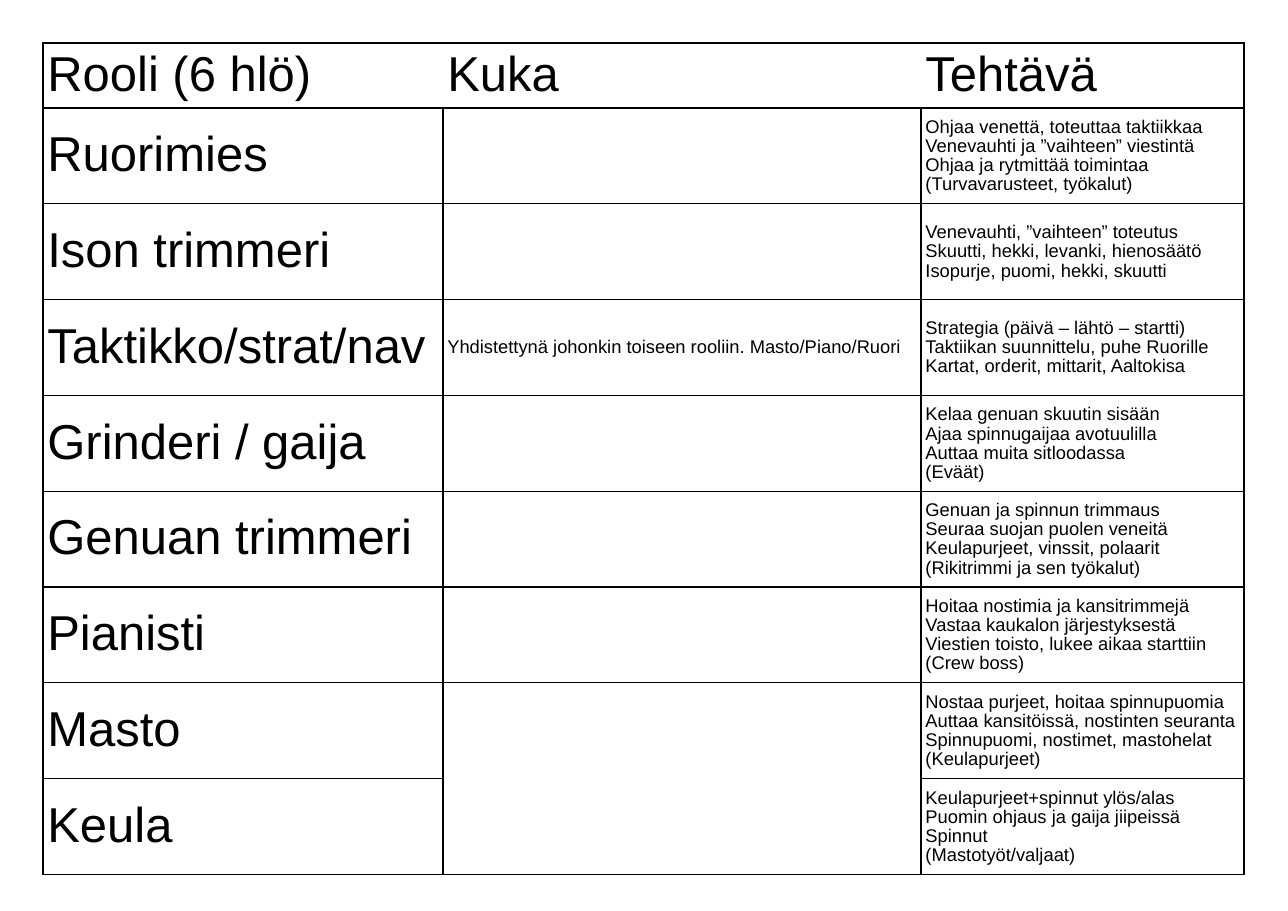
from dataclasses import dataclass

from lxml import etree
from pptx import Presentation
from pptx.dml.color import RGBColor
from pptx.enum.text import MSO_ANCHOR, PP_ALIGN
from pptx.oxml.ns import qn
from pptx.table import _Cell
from pptx.util import Emu, Pt

MIDDLE = MSO_ANCHOR.MIDDLE
LEFT = PP_ALIGN.LEFT
BLACK = RGBColor(0x00, 0x00, 0x00)
FONT = "Arial"
ROLE_SIZE, TASK_SIZE = 32, 12
LINE_SPACING = 0.93
THIN, THICK = 1, 1.42

EMU_PER_PX = 9144
PAGE_WIDTH, PAGE_HEIGHT = 1169, 827
TABLE_LEFT, TABLE_TOP = 39, 39
COLUMN_WIDTHS = (363, 434, 293)
HEADER_HEIGHT, ROLE_HEIGHT = 59, 87
SIDE_MARGIN, TOP_MARGIN, BOTTOM_MARGIN = 4, 5, 4

HEADINGS = ("Rooli (6 hlö)", "Kuka", "Tehtävä")
WHO_COLUMN = 1


@dataclass(frozen=True)
class Role:
    name: str
    tasks: tuple[str, ...]
    who: str = ""


ROLES = (
    Role("Ruorimies", (
        "Ohjaa venettä, toteuttaa taktiikkaa",
        "Venevauhti ja ”vaihteen” viestintä",
        "Ohjaa ja rytmittää toimintaa",
        "(Turvavarusteet, työkalut)")),
    Role("Ison trimmeri", (
        "Venevauhti, ”vaihteen” toteutus",
        "Skuutti, hekki, levanki, hienosäätö",
        "Isopurje, puomi, hekki, skuutti")),
    Role("Taktikko/strat/nav", (
        "Strategia (päivä – lähtö – startti)",
        "Taktiikan suunnittelu, puhe Ruorille",
        "Kartat, orderit, mittarit, Aaltokisa"),
        "Yhdistettynä johonkin toiseen rooliin. Masto/Piano/Ruori"),
    Role("Grinderi / gaija", (
        "Kelaa genuan skuutin sisään",
        "Ajaa spinnugaijaa avotuulilla",
        "Auttaa muita sitloodassa",
        "(Eväät)")),
    Role("Genuan trimmeri", (
        "Genuan ja spinnun trimmaus",
        "Seuraa suojan puolen veneitä",
        "Keulapurjeet, vinssit, polaarit",
        "(Rikitrimmi ja sen työkalut)")),
    Role("Pianisti", (
        "Hoitaa nostimia ja kansitrimmejä",
        "Vastaa kaukalon järjestyksestä",
        "Viestien toisto, lukee aikaa starttiin",
        "(Crew boss)")),
    Role("Masto", (
        "Nostaa purjeet, hoitaa spinnupuomia",
        "Auttaa kansitöissä, nostinten seuranta",
        "Spinnupuomi, nostimet, mastohelat",
        "(Keulapurjeet)")),
    Role("Keula", (
        "Keulapurjeet+spinnut ylös/alas",
        "Puomin ohjaus ja gaija jiipeissä",
        "Spinnut",
        "(Mastotyöt/valjaat)")),
)
LAST_ROW = len(ROLES)
LAST_COLUMN = len(HEADINGS) - 1


def px(length: int) -> Emu:
    return Emu(length * EMU_PER_PX)


def border_widths(row: int, column: int) -> dict[str, float]:
    """Line widths in points by side; zero hides the side."""
    widths = {"a:lnL": THIN, "a:lnR": THIN, "a:lnT": THIN, "a:lnB": THIN}
    if row == 0:
        widths["a:lnL"] = THICK if column == 0 else 0
        widths["a:lnR"] = THICK if column == LAST_COLUMN else 0
        widths["a:lnT"] = THICK
    if column == WHO_COLUMN and row == LAST_ROW - 1:
        widths["a:lnB"] = 0
    if column == WHO_COLUMN and row == LAST_ROW:
        widths["a:lnT"] = 0
    return widths


def draw_borders(cell: _Cell, widths: dict[str, float]) -> None:
    properties = cell._tc.get_or_add_tcPr()
    for side, width in widths.items():
        line = etree.SubElement(properties, qn(side), w=str(int(Pt(width))))
        if width:
            fill = etree.SubElement(line, qn("a:solidFill"))
            etree.SubElement(fill, qn("a:srgbClr"), val=str(BLACK))
        else:
            etree.SubElement(line, qn("a:noFill"))


def write_lines(cell: _Cell, lines: tuple[str, ...], size: int) -> None:
    frame = cell.text_frame
    for index, line in enumerate(lines):
        para = frame.add_paragraph() if index else frame.paragraphs[0]
        para.alignment = LEFT
        para.line_spacing = LINE_SPACING
        span = para.add_run()
        span.text = line
        span.font.name = FONT
        span.font.size = Pt(size)
        span.font.color.rgb = BLACK


def format_cell(cell: _Cell, row: int, column: int) -> None:
    cell.vertical_anchor = MIDDLE
    cell.margin_left = cell.margin_right = px(SIDE_MARGIN)
    cell.margin_top = px(TOP_MARGIN)
    cell.margin_bottom = px(BOTTOM_MARGIN)
    draw_borders(cell, border_widths(row, column))
    cell.fill.background()


def main() -> None:
    deck = Presentation()
    deck.slide_width, deck.slide_height = px(PAGE_WIDTH), px(PAGE_HEIGHT)
    page = deck.slides.add_slide(deck.slide_layouts[6])
    row_heights = [HEADER_HEIGHT] + [ROLE_HEIGHT] * len(ROLES)
    table = page.shapes.add_table(
        len(row_heights), len(COLUMN_WIDTHS), px(TABLE_LEFT), px(TABLE_TOP),
        px(sum(COLUMN_WIDTHS)), px(sum(row_heights))).table
    table.first_row = table.horz_banding = False
    for column, width in enumerate(COLUMN_WIDTHS):
        table.columns[column].width = px(width)
    for row, height in enumerate(row_heights):
        table.rows[row].height = px(height)
        for column in range(len(COLUMN_WIDTHS)):
            format_cell(table.cell(row, column), row, column)

    for column, heading in enumerate(HEADINGS):
        write_lines(table.cell(0, column), (heading,), ROLE_SIZE)
    for row, role in enumerate(ROLES, start=1):
        write_lines(table.cell(row, 0), (role.name,), ROLE_SIZE)
        if role.who:
            write_lines(table.cell(row, WHO_COLUMN), (role.who,), TASK_SIZE)
        write_lines(table.cell(row, LAST_COLUMN), role.tasks, TASK_SIZE)
    deck.save("out.pptx")


if __name__ == "__main__":
    main()
